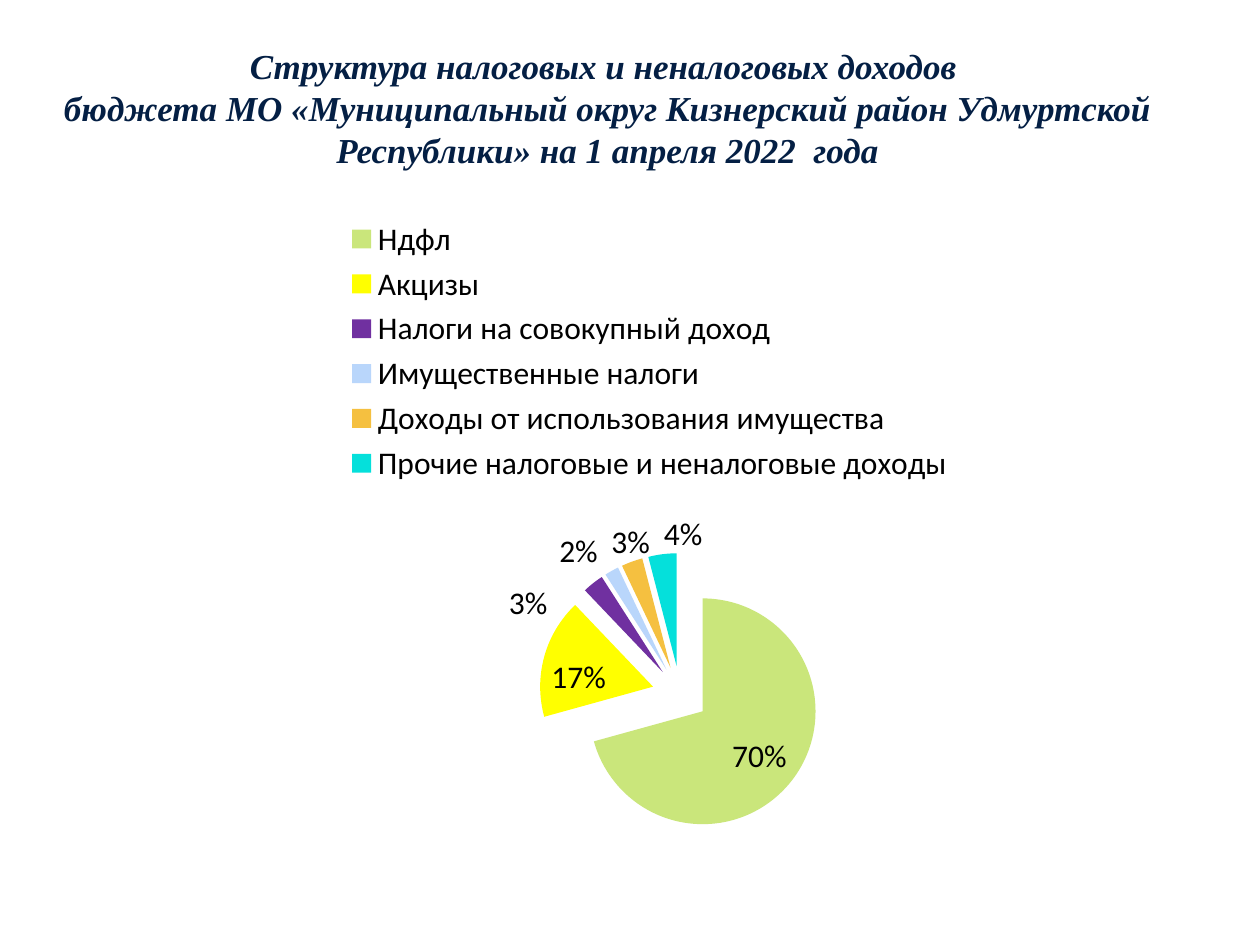
from dataclasses import dataclass

from lxml.etree import SubElement
from pptx import Presentation
from pptx.chart.data import CategoryChartData as ChartData
from pptx.dml.color import RGBColor as Rgb
from pptx.enum.chart import XL_CHART_TYPE as ChartType
from pptx.enum.chart import XL_LABEL_POSITION as LabelPos
from pptx.enum.chart import XL_LEGEND_POSITION as LegendPos
from pptx.enum.text import MSO_ANCHOR as Anchor
from pptx.enum.text import PP_ALIGN as Align
from pptx.oxml.ns import qn
from pptx.util import Cm, Pt


@dataclass(frozen=True)
class Theme:
    title_font: str = "Times New Roman"
    chart_font: str = "Calibri"
    title_size: int = 20
    chart_size: int = 18
    title_color: str = "041F44"
    chart_color: str = "000000"


# Income source, share in percent, slice colour, label shift (None: inside the slice)
INCOME = [
    ("Ндфл", 70, "CAE67B", None),
    ("Акцизы", 17, "FFFF00", None),
    ("Налоги на совокупный доход", 3, "7030A0", (-0.04, 0.07)),
    ("Имущественные налоги", 2, "B9D6FB", (-0.01, 0.01)),
    ("Доходы от использования имущества", 3, "F5C040", (0.02, 0.01)),
    ("Прочие налоговые и неналоговые доходы", 4, "05E0DB", (0.04, 0.01)),
]
TITLE = [
    "Структура налоговых и неналоговых доходов ",
    "бюджета МО «Муниципальный округ Кизнерский район Удмуртской "
    "Республики» на 1 апреля 2022  года",
]
EXPLOSION = 25


class SlideBuilder:
    def __init__(self, page, theme):
        self.page = page
        self.theme = theme

    def style(self, font, name, size, color):
        font.name = name
        font.size = Pt(size)
        font.color.rgb = Rgb.from_string(color)

    def style_chart_text(self, font):
        theme = self.theme
        self.style(font, theme.chart_font, theme.chart_size, theme.chart_color)

    def title(self, lines, left, top, width, height):
        theme = self.theme
        frame = self.page.shapes.add_textbox(left, top, width, height).text_frame
        frame.word_wrap = True
        frame.vertical_anchor = Anchor.MIDDLE
        para = frame.paragraphs[0]
        para.alignment = Align.CENTER
        for index, line in enumerate(lines):
            if index:
                para.add_line_break()
            span = para.add_run()
            span.text = line
            span.font.bold = span.font.italic = True
            self.style(span.font, theme.title_font, theme.title_size, theme.title_color)

    def place(self, layout, inner=False, from_edge=True, **fractions):
        """Set a chart part's place, or its shift, in fractions of the chart area."""
        manual = SubElement(layout, qn("c:manualLayout"))
        if inner:
            SubElement(manual, qn("c:layoutTarget")).set("val", "inner")
        if from_edge:
            for side in ("x", "y"):
                SubElement(manual, qn(f"c:{side}Mode")).set("val", "edge")
        for side, value in fractions.items():
            SubElement(manual, qn(f"c:{side}")).set("val", str(value))

    def explode(self, parent, before):
        """Pull slices out; the element goes just ahead of the given child."""
        explosion = SubElement(parent, qn("c:explosion"))
        explosion.set("val", str(EXPLOSION))
        parent.find(qn(before)).addprevious(explosion)

    def pie(self, rows, left, top, width, height):
        data = ChartData(number_format='0"%"')
        data.categories = [row[0] for row in rows]
        data.add_series("Series 1", [row[1] for row in rows])
        chart = self.page.shapes.add_chart(
            ChartType.PIE, left, top, width, height, data
        ).chart
        chart.has_title = False
        self.style_chart_text(chart.font)

        # Legend above the pie
        chart.has_legend = True
        legend = chart.legend
        legend.position = LegendPos.TOP
        legend.include_in_layout = False
        self.style_chart_text(legend.font)
        layout = legend._element.get_or_add_layout()
        self.place(layout, x=0.2, y=0.01, w=0.6, h=0.43)

        # Plot area
        area = chart._chartSpace.chart.plotArea
        layout = area.find(qn("c:layout"))
        if layout is None:
            layout = SubElement(area, qn("c:layout"))
            area.insert(0, layout)
        self.place(layout, inner=True, x=0.39, y=0.54, w=0.28, h=0.44)

        # Slices and their labels
        plot = chart.plots[0]
        plot.vary_by_categories = True
        series = plot.series[0]
        for index, (_, _, color, shift) in enumerate(rows):
            point = series.points[index]
            point.format.fill.solid()
            point.format.fill.fore_color.rgb = Rgb.from_string(color)
            label = point.data_label
            self.style_chart_text(label.font)
            label.position = LabelPos.OUTSIDE_END if shift else LabelPos.INSIDE_END

        # Spread the labels of the narrow slices, without leader lines
        labels = series._element.get_or_add_dLbls()
        for label_xml, (_, _, _, shift) in zip(labels.findall(qn("c:dLbl")), rows):
            if shift:
                layout = SubElement(label_xml, qn("c:layout"))
                label_xml.find(qn("c:idx")).addnext(layout)
                self.place(layout, from_edge=False, x=shift[0], y=shift[1])
        for leader in labels.findall(qn("c:showLeaderLines")):
            leader.set("val", "0")

        # Pull the slices apart
        self.explode(series._element, "c:dPt")
        for slice_xml in series._element.findall(qn("c:dPt")):
            self.explode(slice_xml, "c:spPr")


def main():
    deck = Presentation()
    deck.slide_width, deck.slide_height = Cm(25.4), Cm(19.05)
    page = deck.slides.add_slide(deck.slide_layouts[6])
    builder = SlideBuilder(page, Theme())

    # Heading
    builder.title(TITLE, Cm(0), Cm(1), Cm(24.5), Cm(2.33))
    # Income structure
    builder.pie(INCOME, Cm(2.77), Cm(4.17), Cm(20.65), Cm(12.93))

    deck.save("out.pptx")


if __name__ == "__main__":
    main()
